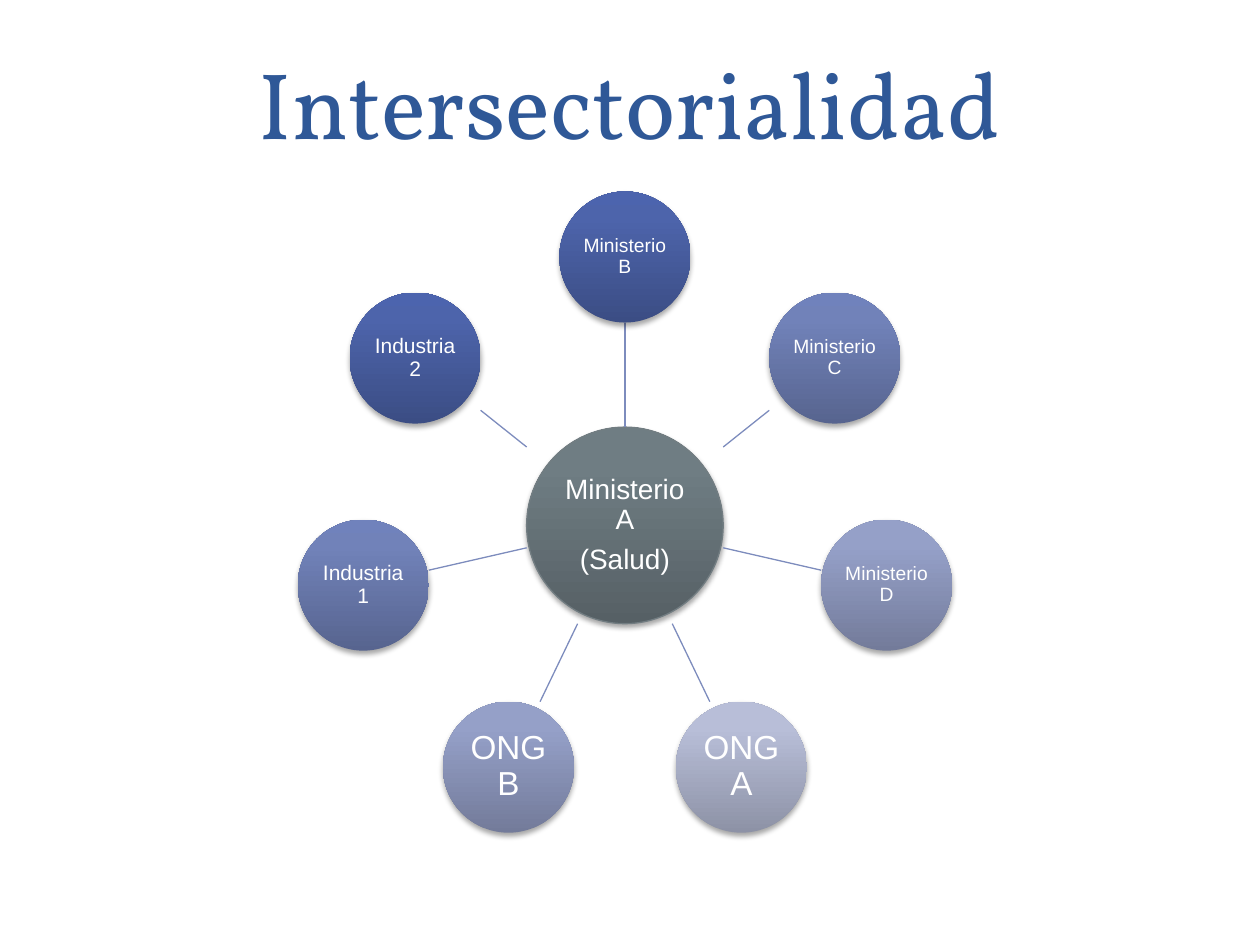
import math
from dataclasses import dataclass
from lxml import etree
from pptx import Presentation
from pptx import util as u
from pptx.dml.color import RGBColor
from pptx.enum import shapes, text
from pptx.oxml import parse_xml
from pptx.oxml.ns import nsdecls, qn


@dataclass(frozen=True)
class Theme:
    head: str = "2F5897"
    ink: str = "FFFFFF"
    spoke: str = "7D8CBD"
    rim: str = "727D82"
    hub: tuple = ("566065", "6F7D83", "6F7E84")
    tones: tuple = (
        ("3B4D84", "4D64AB", "4C64AE"),
        ("57648F", "7182B9", "7082BC"),
        ("737B9A", "95A0C8", "94A0CA"),
        ("8D92A6", "B8BED8", "B8BFDA"),
    )
    serif: str = "Vollkorn"
    sans: str = "Arial"
    title: int = 54
    core: int = 16
    small: int = 11
    mid: int = 12
    large: int = 19
    line: float = 0.75


THEME = Theme()
NODES = (
    ("Ministerio B", THEME.small, 0),
    ("Ministerio C", THEME.small, 1),
    ("Ministerio D", THEME.small, 2),
    ("ONG A", THEME.large, 3),
    ("ONG B", THEME.large, 2),
    ("Industria 1", THEME.mid, 1),
    ("Industria 2", THEME.mid, 0),
)


def add_run(para, words, size, face, color):
    run = para.add_run()
    run.text = words
    run.font.size = u.Pt(size)
    run.font.name = face
    run.font.color.rgb = RGBColor.from_string(color)


def shade(shape, tones):
    stops = "".join(
        f'<a:gs pos="{pos}"><a:srgbClr val="{tone}"/></a:gs>'
        for pos, tone in zip((0, 80000, 100000), tones)
    )
    grad = parse_xml(
        f'<a:gradFill {nsdecls("a")} rotWithShape="1"><a:gsLst>{stops}</a:gsLst>'
        '<a:lin ang="16200000" scaled="0"/></a:gradFill>'
    )
    shape.fill.background()
    props = shape.element.spPr
    props.replace(props.find(qn("a:noFill")), grad)


def cast(shape):
    shape.shadow.inherit = False
    effects = shape.element.spPr.find(qn("a:effectLst"))
    effects.append(parse_xml(
        f'<a:outerShdw {nsdecls("a")} blurRad="{u.Pt(3.1)}" dist="{u.Pt(1.8)}" '
        'dir="5400000" rotWithShape="0"><a:srgbClr val="000000">'
        '<a:alpha val="35000"/></a:srgbClr></a:outerShdw>'
    ))


def add_disc(slide, mid_x, mid_y, half, lines, size, tones, rim=None):
    disc = slide.shapes.add_shape(
        shapes.MSO_SHAPE.OVAL, mid_x - half, mid_y - half, 2 * half, 2 * half
    )
    shade(disc, tones)
    if rim:
        disc.line.color.rgb = RGBColor.from_string(rim)
        disc.line.width = u.Pt(THEME.line)
    else:
        disc.line.fill.background()
    cast(disc)
    frame = disc.text_frame
    frame.word_wrap = True
    frame.vertical_anchor = text.MSO_ANCHOR.MIDDLE
    inset = u.Pt(size * 0.2)
    frame.margin_left = frame.margin_right = inset
    frame.margin_top = frame.margin_bottom = inset
    for i, words in enumerate(lines):
        para = frame.add_paragraph() if i else frame.paragraphs[0]
        para.alignment = text.PP_ALIGN.CENTER
        para.line_spacing = 0.9
        para.space_after = u.Pt(size * 0.35)
        add_run(para, words, size, THEME.sans, THEME.ink)


def add_spoke(slide, start, end):
    spoke = slide.shapes.add_connector(
        shapes.MSO_CONNECTOR.STRAIGHT, *map(round, start + end)
    )
    spoke.line.color.rgb = RGBColor.from_string(THEME.spoke)
    spoke.line.width = u.Pt(THEME.line)
    etree.SubElement(spoke.element.spPr, qn("a:effectLst"))


def add_title(slide, left, top, width, height):
    box = slide.shapes.add_textbox(left, top, width, height)
    frame = box.text_frame
    frame.word_wrap = True
    frame.vertical_anchor = text.MSO_ANCHOR.BOTTOM
    para = frame.paragraphs[0]
    para.alignment = text.PP_ALIGN.CENTER
    para.line_spacing = u.Pt(58)
    add_run(para, "Intersectorialidad", THEME.title, THEME.serif, THEME.head)


def add_wheel(slide, left, top, width, height):
    core, node = u.Inches(0.78), u.Inches(0.52)
    mid_x, mid_y = left + width // 2, top + height // 2
    reach = height // 2 - node
    add_disc(slide, mid_x, mid_y, core, ("Ministerio A", "(Salud)"),
             THEME.core, THEME.hub, THEME.rim)
    for i, (label, size, tone) in enumerate(NODES):
        angle = math.tau * i / len(NODES)
        step_x, step_y = math.sin(angle), -math.cos(angle)
        edge = max(abs(step_x), abs(step_y))

        def point(dist):
            return mid_x + dist * step_x, mid_y + dist * step_y

        add_spoke(slide, point(core / edge), point(reach - node / edge))
        hub_x, hub_y = map(round, point(reach))
        add_disc(slide, hub_x, hub_y, node, (label,), size, THEME.tones[tone])


def main():
    deck = Presentation()
    deck.slide_width, deck.slide_height = u.Inches(10), u.Inches(7.5)
    slide = deck.slides.add_slide(deck.slide_layouts[6])
    add_wheel(slide, u.Inches(2.36), u.Inches(1.52), u.Inches(5.2), u.Inches(5.3))
    add_title(slide, u.Inches(0.5), u.Inches(0.05), u.Inches(9), u.Inches(1.26))
    deck.save("out.pptx")


if __name__ == "__main__":
    main()
